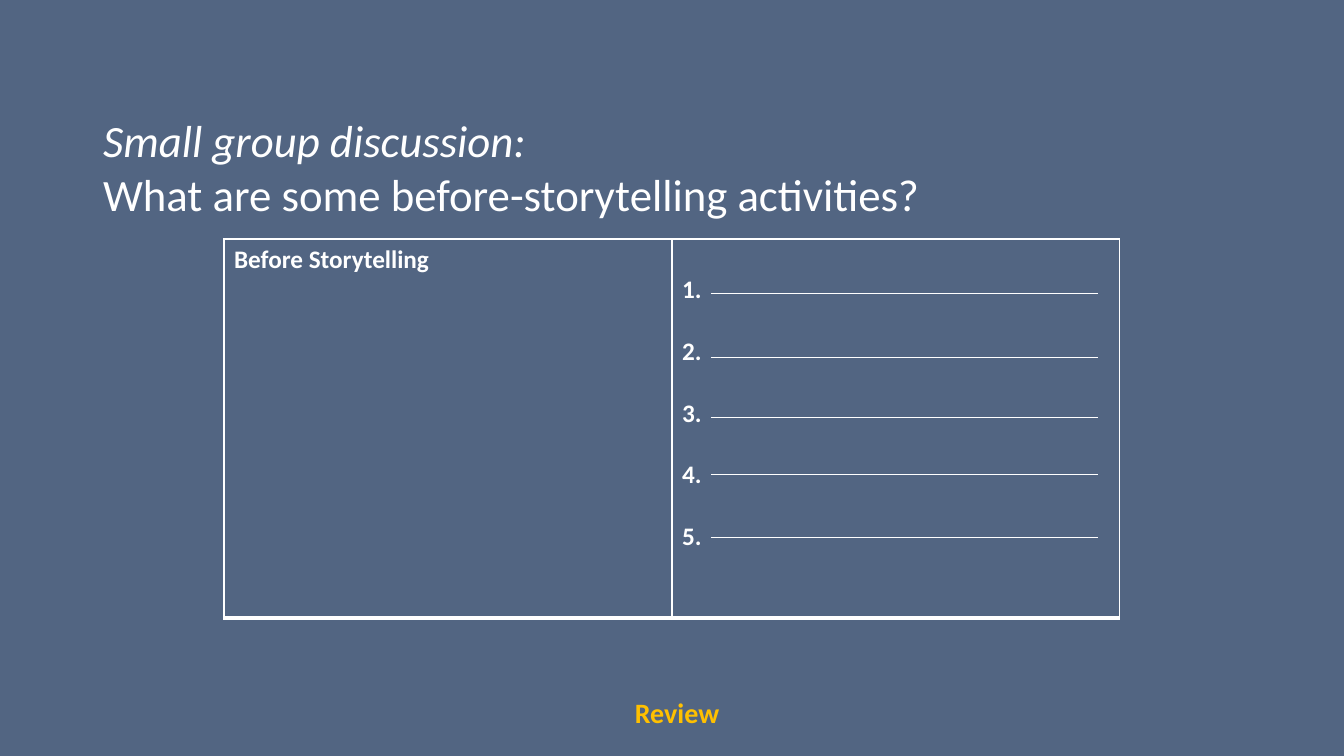
"""Build a review slide with a before-storytelling discussion table."""
from dataclasses import dataclass

from pptx import Presentation
from pptx.dml.color import RGBColor
from pptx.enum.shapes import MSO_CONNECTOR
from pptx.enum.text import MSO_ANCHOR, MSO_AUTO_SIZE, PP_ALIGN
from pptx.oxml import parse_xml
from pptx.oxml.ns import nsdecls
from pptx.oxml.xmlchemy import OxmlElement
from pptx.slide import Slide
from pptx.table import _Cell
from pptx.text.text import _Paragraph
from pptx.util import Emu, Pt


@dataclass(frozen=True)
class Theme:
    font: str = "Calibri"
    background: str = "526582"
    white: str = "FFFFFF"
    accent: str = "FFC000"
    body_size: int = 32
    label_size: int = 20
    table_size: int = 18
    number_gap: int = 22
    rule_width: float = 0.5
    border_width: int = 1
    bottom_width: int = 3


@dataclass(frozen=True)
class Box:
    left: int
    top: int
    width: int
    height: int

    def emu(self) -> tuple[Emu, ...]:
        return tuple(px(v) for v in (self.left, self.top, self.width, self.height))


THEME = Theme()
PX_PER_INCH = 100.8
SLIDE = Box(0, 0, 1344, 756)
BODY = Box(93, 108, 1159, 480)
TABLE = Box(224, 239, 896, 379)
REVIEW = Box(620, 694, 114, 42)
RULE_LEFT, RULE_RIGHT = 711, 1098
RULE_TOPS = (293, 357, 417, 474, 537)
NUMBERS_MARGIN = 36


def px(value: int) -> Emu:
    return Emu(round(value * 914400 / PX_PER_INCH))


def add_run(p: _Paragraph, text: str, size: int, color: str = THEME.white,
            bold: bool = False, italic: bool = False) -> None:
    r = p.add_run()
    r.text = text
    r.font.name = THEME.font
    r.font.size = Pt(size)
    r.font.bold = bold
    r.font.italic = italic
    r.font.color.rgb = RGBColor.from_string(color)


def add_question(s: Slide) -> None:
    sp = s.placeholders[1]
    sp.left, sp.top, sp.width, sp.height = BODY.emu()
    tf = sp.text_frame
    tf.auto_size = MSO_AUTO_SIZE.NONE
    tf.vertical_anchor = MSO_ANCHOR.TOP
    lines = (("Small group discussion:", True),
             ("What are some before-storytelling activities?", False))
    for i, (text, italic) in enumerate(lines):
        p = tf.add_paragraph() if i else tf.paragraphs[0]
        pPr = p._p.get_or_add_pPr()
        pPr.set("marL", "0")
        pPr.set("indent", "0")
        pPr.append(OxmlElement("a:buNone"))
        p.space_before = Pt(0)
        add_run(p, text, THEME.body_size, italic=italic)


def add_review(s: Slide) -> None:
    tf = s.shapes.add_textbox(*REVIEW.emu()).text_frame
    tf.word_wrap = True
    p = tf.paragraphs[0]
    p.alignment = PP_ALIGN.CENTER
    p.line_spacing = 0.9
    add_run(p, "Review", THEME.label_size, THEME.accent, bold=True)


def set_borders(cell: _Cell) -> None:
    tcPr = cell._tc.get_or_add_tcPr()
    for i, side in enumerate("LRTB"):
        width = THEME.bottom_width if side == "B" else THEME.border_width
        tcPr.insert(i, parse_xml(
            f'<a:ln{side} {nsdecls("a")} w="{Pt(width)}"><a:solidFill>'
            f'<a:srgbClr val="{THEME.white}"/></a:solidFill></a:ln{side}>'))


def add_answer_table(s: Slide) -> None:
    table = s.shapes.add_table(1, 2, *TABLE.emu()).table
    table.first_row = False
    table.horz_banding = False
    heading, answers = table.cell(0, 0), table.cell(0, 1)
    for cell in (heading, answers):
        cell.fill.background()
        set_borders(cell)
    add_run(heading.text_frame.paragraphs[0], "Before Storytelling",
            THEME.table_size, bold=True)
    answers.margin_top = px(NUMBERS_MARGIN)
    tf = answers.text_frame
    for i in range(len(RULE_TOPS)):
        p = tf.add_paragraph() if i else tf.paragraphs[0]
        p.space_before = Pt(THEME.number_gap if i else 0)
        add_run(p, f"{i + 1}.", THEME.table_size, bold=True)


def add_rule(s: Slide, top: int) -> None:
    line = s.shapes.add_connector(MSO_CONNECTOR.STRAIGHT, px(RULE_LEFT), px(top),
                                  px(RULE_RIGHT), px(top))
    line.line.width = Pt(THEME.rule_width)
    line.line.color.rgb = RGBColor.from_string(THEME.white)
    line._element.spPr.append(OxmlElement("a:effectLst"))


def main() -> None:
    prs = Presentation()
    prs.slide_width, prs.slide_height = px(SLIDE.width), px(SLIDE.height)
    s = prs.slides.add_slide(prs.slide_layouts[1])
    s.background.fill.solid()
    s.background.fill.fore_color.rgb = RGBColor.from_string(THEME.background)
    title = s.shapes.title._element
    title.getparent().remove(title)
    add_review(s)
    add_question(s)
    add_answer_table(s)
    for top in RULE_TOPS:
        add_rule(s, top)
    prs.save("out.pptx")


if __name__ == "__main__":
    main()
